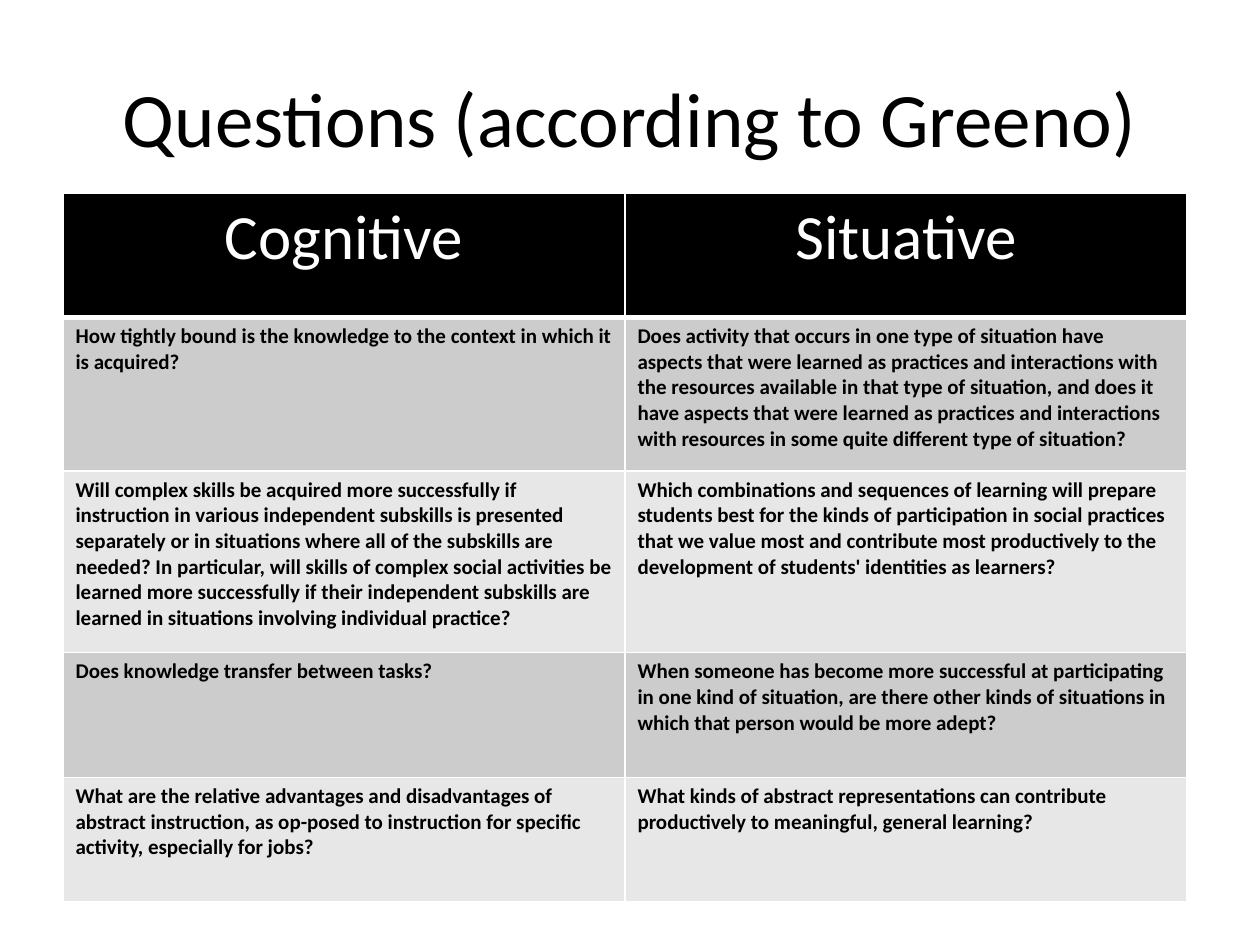
"""Build a slide that sets cognitive and situative questions side by side."""
from dataclasses import dataclass

from lxml.etree import SubElement
from pptx import Presentation
from pptx.dml.color import RGBColor
from pptx.enum.text import MSO_ANCHOR, PP_ALIGN
from pptx.oxml.ns import qn
from pptx.util import Inches, Pt

WIDE, HIGH = 10, 7.5
EDGE = 0.05 * WIDE
COLS = (4.46, 4.46)
ROWS = (0.99, 1.22, 1.44, 0.99, 0.99)
HUES = {"black": "000000", "white": "FFFFFF", "dark": "CCCCCC", "light": "E7E7E7"}


@dataclass(frozen=True)
class Style:
    size: int
    hue: str
    bold: bool = False
    align: PP_ALIGN = PP_ALIGN.LEFT


TITLE = Style(44, "black", align=PP_ALIGN.CENTER)
HEAD = Style(36, "white", align=PP_ALIGN.CENTER)
BODY = Style(12, "black", bold=True)


@dataclass(frozen=True)
class Row:
    left: str
    right: str


PAIRS = (
    Row("Cognitive", "Situative"),
    Row(
        "How tightly bound is the knowledge to the context in which it is acquired?",
        "Does activity that occurs in one type of situation have aspects that were "
        "learned as practices and interactions with the resources available in that "
        "type of situation, and does it have aspects that were learned as practices "
        "and interactions with resources in some quite different type of situation?",
    ),
    Row(
        "Will complex skills be acquired more successfully if instruction in various "
        "independent subskills is presented separately or in situations where all of "
        "the subskills are needed? In particular, will skills of complex social "
        "activities be learned more successfully if their independent subskills are "
        "learned in situations involving individual practice?",
        "Which combinations and sequences of learning will prepare students best for "
        "the kinds of participation in social practices that we value most and "
        "contribute most productively to the development of students' identities as "
        "learners?",
    ),
    Row(
        "Does knowledge transfer between tasks?",
        "When someone has become more successful at participating in one kind of "
        "situation, are there other kinds of situations in which that person would be "
        "more adept?",
    ),
    Row(
        "What are the relative advantages and disadvantages of abstract instruction, "
        "as op-posed to instruction for specific activity, especially for jobs?",
        "What kinds of abstract representations can contribute productively to "
        "meaningful, general learning?",
    ),
)


def tint(name: str) -> RGBColor:
    return RGBColor.from_string(HUES[name])


def write(frame, text: str, style: Style) -> None:
    frame.word_wrap = True
    para = frame.paragraphs[0]
    para.alignment = style.align
    run = para.add_run()
    run.text = text
    font = run.font
    font.name, font.size, font.bold = "Calibri", Pt(style.size), style.bold
    font.color.rgb = tint(style.hue)


def rule(cell, sides: dict[str, int]) -> None:
    props = cell._tc.get_or_add_tcPr()
    for spot, (side, width) in enumerate(sides.items()):
        line = SubElement(props, qn(f"a:ln{side}"), w=str(Pt(width)))
        fill = SubElement(line, qn("a:solidFill"))
        SubElement(fill, qn("a:srgbClr"), val=HUES["white"])
        props.insert(spot, line)


def draw_title(slide, text: str) -> None:
    box = slide.shapes.add_textbox(
        Inches(EDGE), Inches(0.04 * HIGH), Inches(WIDE - 2 * EDGE), Inches(HIGH / 6)
    )
    box.text_frame.vertical_anchor = MSO_ANCHOR.MIDDLE
    write(box.text_frame, text, TITLE)


def draw_table(slide, pairs: tuple[Row, ...]) -> None:
    table = slide.shapes.add_table(
        len(pairs), len(COLS), Inches(EDGE), Inches(1.53),
        Inches(sum(COLS)), Inches(sum(ROWS)),
    ).table
    for col, width in zip(table.columns, COLS):
        col.width = Inches(width)
    for num, (pair, height) in enumerate(zip(pairs, ROWS)):
        table.rows[num].height = Inches(height)
        shade = "black" if num == 0 else ("light", "dark")[num % 2]
        sides = {"L": 1, "R": 1, "T": 3 if num == 1 else 1, "B": 3 if num == 0 else 1}
        for spot, text in enumerate((pair.left, pair.right)):
            cell = table.cell(num, spot)
            cell.fill.solid()
            cell.fill.fore_color.rgb = tint(shade)
            rule(cell, sides)
            write(cell.text_frame, text, BODY if num else HEAD)


def main() -> None:
    deck = Presentation()
    deck.slide_width, deck.slide_height = Inches(WIDE), Inches(HIGH)
    slide = deck.slides.add_slide(deck.slide_layouts[6])
    draw_title(slide, "Questions (according to Greeno)")
    draw_table(slide, PAIRS)
    deck.save("out.pptx")


if __name__ == "__main__":
    main()
